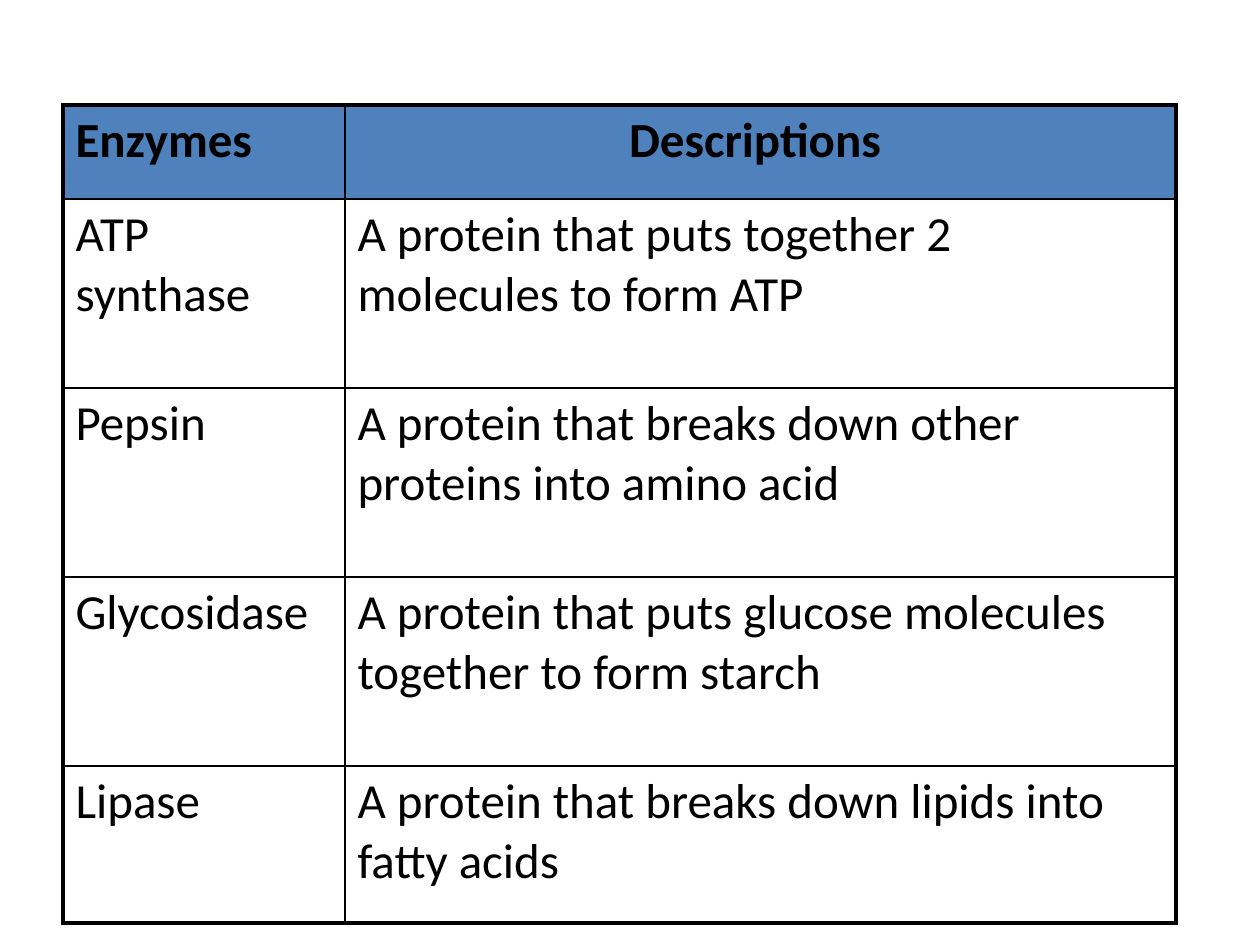
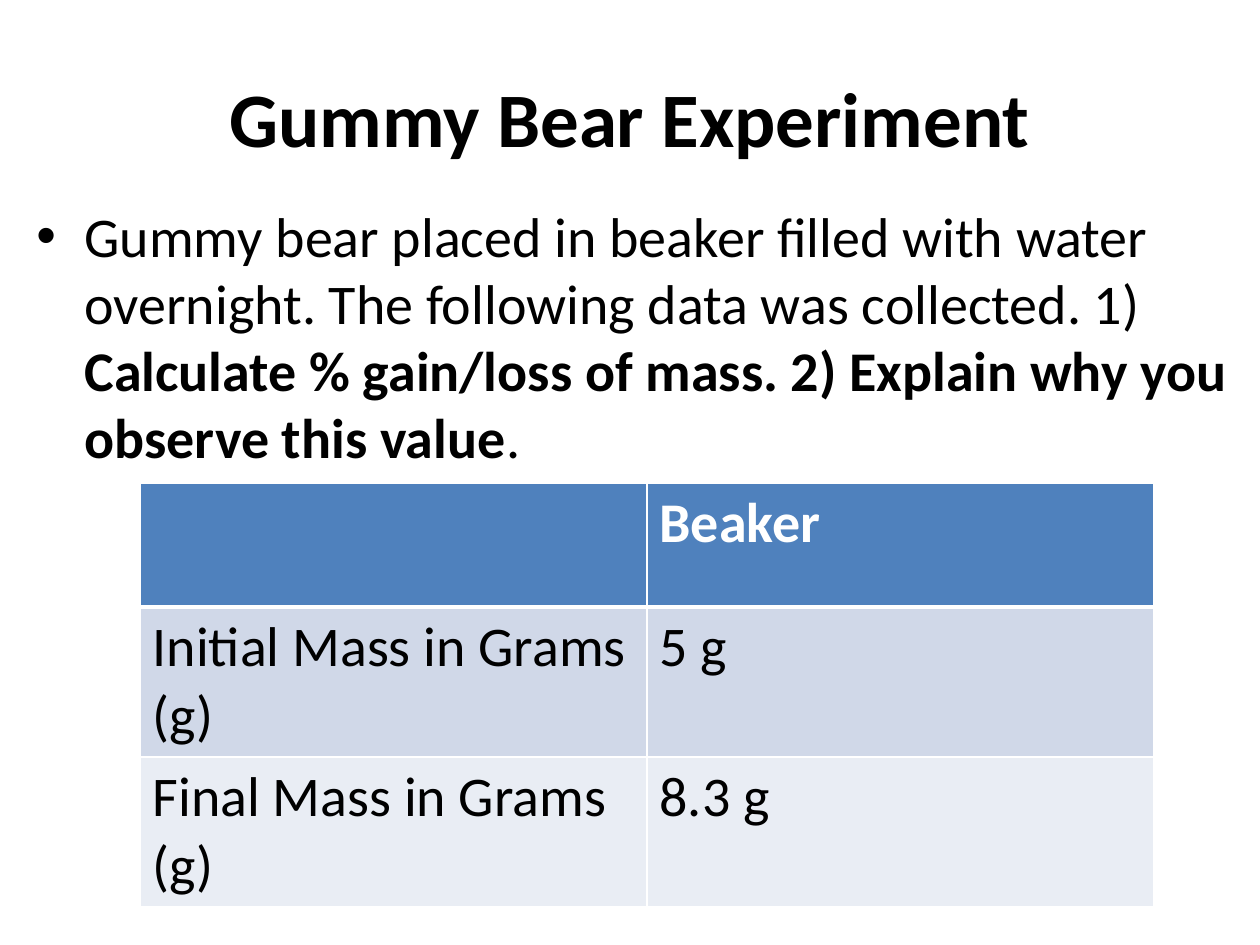
from lxml.etree import SubElement
from pptx import Presentation
from pptx.dml.color import RGBColor
from pptx.enum.text import MSO_ANCHOR, PP_ALIGN
from pptx.oxml import parse_xml
from pptx.oxml.ns import nsdecls, qn
from pptx.util import Pt

EMU_PER_PX = 914400 / 126
FONT = "Calibri"
TITLE_ONLY, BLANK = 5, 6
COLORS = {
    "ink": "000000",
    "paper": "FFFFFF",
    "header": "4F81BD",
    "band_dark": "D0D8E8",
    "band_light": "E9EDF4",
}


def px(length):
    return round(length * EMU_PER_PX)


def color(name):
    return RGBColor.from_string(COLORS[name])


def write(para, text, size=32, bold=False, ink="ink", align=None):
    """Add one formatted span of text to a paragraph."""
    span = para.add_run()
    span.text = text
    span.font.name = FONT
    span.font.size = Pt(size)
    span.font.bold = bold
    span.font.color.rgb = color(ink)
    if align is not None:
        para.alignment = align


def set_borders(cell, ink, widths):
    """Draw the left, right, top and bottom borders, widths in points."""
    properties = cell._tc.get_or_add_tcPr()
    for index, (side, width) in enumerate(zip("LRTB", widths)):
        properties.insert(index, parse_xml(
            f'<a:ln{side} {nsdecls("a")} w="{Pt(width)}"><a:solidFill>'
            f'<a:srgbClr val="{COLORS[ink]}"/></a:solidFill></a:ln{side}>'))


class SlideBuilder:
    def __init__(self, deck):
        self.deck = deck
        self.page = None

    def new_page(self, layout):
        self.page = self.deck.slides.add_slide(self.deck.slide_layouts[layout])

    def title(self, text, left, top, width, height):
        box = self.page.shapes.title
        box.left, box.top, box.width, box.height = map(px, (left, top, width, height))
        box.text_frame.vertical_anchor = MSO_ANCHOR.MIDDLE
        write(box.text_frame.paragraphs[0], text, size=44, bold=True,
              align=PP_ALIGN.CENTER)

    def bullet(self, spans, left, top, width, height, indent):
        box = self.page.shapes.add_textbox(*map(px, (left, top, width, height)))
        box.text_frame.word_wrap = True
        para = box.text_frame.paragraphs[0]
        for text, bold in spans:
            write(para, text, bold=bold)
        properties = para._p.get_or_add_pPr()
        properties.set("marL", str(px(indent)))
        properties.set("indent", str(-px(indent)))
        SubElement(properties, qn("a:buFont"), typeface="Arial")
        SubElement(properties, qn("a:buChar"), char="•")

    def table(self, rows, left, top, widths, heights, fills, border, size,
              head_ink="ink", head_align=(None, None), outer=1, under_head=1):
        frame = self.page.shapes.add_table(
            len(rows), len(widths),
            *map(px, (left, top, sum(widths), sum(heights))))
        table = frame.table
        table.first_row = table.horz_banding = False
        for column, width in zip(table.columns, widths):
            column.width = px(width)
        for row, height in zip(table.rows, heights):
            row.height = px(height)

        # Horizontal and vertical rules, from the first edge to the last
        across = [outer, under_head] + [1] * (len(rows) - 2) + [outer]
        down = [outer] + [1] * (len(widths) - 1) + [outer]
        for r, texts in enumerate(rows):
            for c, text in enumerate(texts):
                cell = table.cell(r, c)
                cell.fill.solid()
                cell.fill.fore_color.rgb = color(fills[r])
                set_borders(cell, border,
                            (down[c], down[c + 1], across[r], across[r + 1]))
                if text:
                    is_head = r == 0
                    write(cell.text_frame.paragraphs[0], text, size=size,
                          bold=is_head, ink=head_ink if is_head else "ink",
                          align=head_align[c] if is_head else None)


def enzyme_page(builder):
    builder.new_page(BLANK)
    enzymes = [
        ("Enzymes", "Descriptions "),
        ("ATP synthase", "A protein that puts together 2 molecules to form ATP"),
        ("Pepsin", "A protein that breaks down other proteins into amino acid"),
        ("Glycosidase",
         "A protein that puts glucose molecules together to form starch"),
        ("Lipase", "A protein that breaks down lipids into fatty acids"),
    ]
    builder.table(enzymes, 63, 105, widths=(282, 831),
                  heights=(94, 189, 189, 189, 157),
                  fills=["header"] + ["paper"] * 4, border="ink", size=28,
                  head_align=(None, PP_ALIGN.CENTER), outer=2.25)


def experiment_page(builder):
    builder.new_page(TITLE_ONLY)
    builder.title("Gummy Bear Experiment", 63, 38, 1134, 157)
    builder.bullet([
        ("Gummy bear placed in beaker filled with water overnight. "
         "The following data was collected. 1) ", False),
        ("Calculate % gain/loss of mass. 2) Explain why you observe this value",
         True),
        (".", False),
    ], 24, 195, 1236, 624, indent=48)
    masses = [
        ("", "Beaker"),
        ("Initial Mass in Grams (g)", "5 g"),
        ("Final Mass in Grams (g)", "8.3 g"),
    ]
    builder.table(masses, 140, 483, widths=(507, 507), heights=(124, 150, 150),
                  fills=("header", "band_dark", "band_light"), border="paper",
                  size=32, head_ink="paper", under_head=3)


def main():
    deck = Presentation()
    deck.slide_width, deck.slide_height = px(1260), px(945)
    builder = SlideBuilder(deck)
    enzyme_page(builder)
    experiment_page(builder)
    deck.save("out.pptx")


if __name__ == "__main__":
    main()
